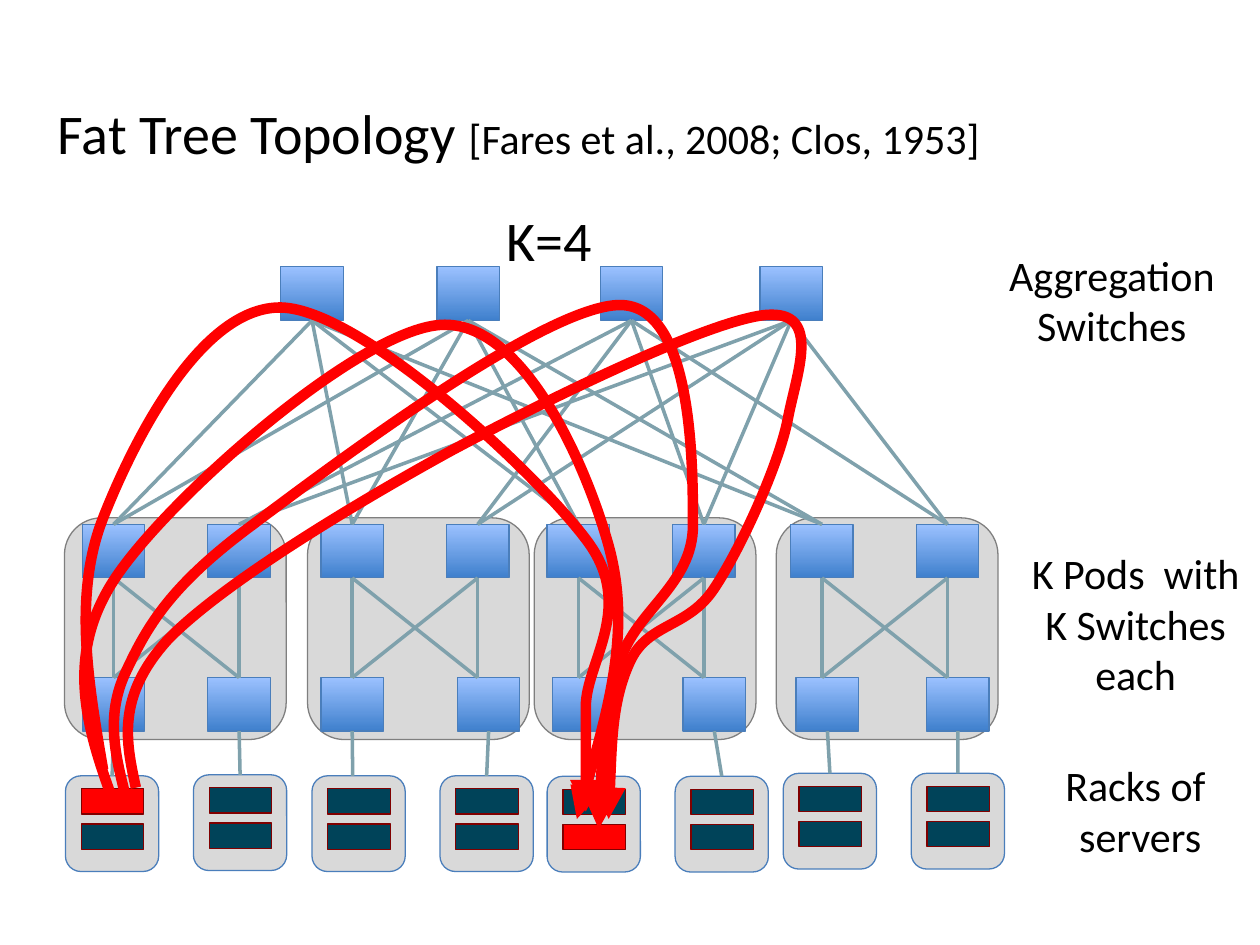
from lxml.etree import SubElement
from pptx import Presentation
from pptx.dml.color import RGBColor
from pptx.enum.shapes import MSO_CONNECTOR, MSO_SHAPE
from pptx.enum.text import MSO_ANCHOR, PP_ALIGN
from pptx.oxml.ns import qn
from pptx.util import Cm, Pt

BLACK = RGBColor(0x00, 0x00, 0x00)
RED = RGBColor(0xFF, 0x00, 0x00)
GREY = RGBColor(0xD9, 0xD9, 0xD9)
POD_LINE = RGBColor(0x7F, 0x7F, 0x7F)
BLUE = RGBColor(0x4A, 0x7E, 0xBB)
SWITCH_TOP = RGBColor(0x9B, 0xC1, 0xFF)
SWITCH_BOTTOM = RGBColor(0x3F, 0x80, 0xCD)
LINK = RGBColor(0x7F, 0xA1, 0xAC)
SERVER = RGBColor(0x00, 0x43, 0x59)
SERVER_LINE = RGBColor(0x80, 0x00, 0x00)
FONT = "Calibri"
TOP, BOTTOM = 0, 2  # connection sites

TITLE = [("Fat Tree Topology ", 32), ("[Fares et al., 2008; Clos, 1953]", 24)]
# box in cm, size, alignment, wrap, paragraphs
LABELS = [
    ((9.96, 4.01, 2.24, 1.6), 32, PP_ALIGN.LEFT, False, ["K=4"]),
    ((19.33, 4.9, 6.17, 2.29), 24, PP_ALIGN.CENTER, True, ["Aggregation Switches"]),
    ((19.81, 10.92, 6.17, 3.3), 24, PP_ALIGN.CENTER, True,
     ["K Pods  with", " K Switches ", "each"]),
    ((19.96, 15.19, 6.05, 2.29), 24, PP_ALIGN.CENTER, True, ["Racks of ", "servers"]),
]

# All positions in cm
POD_TOP, POD_SIZE = 10.44, 4.47
POD_LEFTS = [1.3, 6.2, 10.77, 15.65]
SWITCH_WIDTH, SWITCH_HEIGHT = 1.26, 1.08
CORE_TOP, UPPER_TOP, LOWER_TOP = 5.38, 10.57, 13.66
CORE_LEFTS = [5.66, 8.81, 12.1, 15.32]
UPPER_LEFTS = [left + step for left in (1.66, 6.47, 11.03, 15.94) for step in (0, 2.53)]
LOWER_LEFTS = [1.66, 4.19, 6.47, 9.22, 11.14, 13.77, 16.05, 18.68]
RACK_WIDTH, RACK_HEIGHT = 1.88, 1.93
RACK_LEFTS = [left + step for left in (1.32, 6.29, 11.03, 15.79) for step in (0, 2.58)]
RACK_TOPS = [15.64, 15.62, 15.64, 15.64, 15.65, 15.65, 15.59, 15.59]
SERVER_INSET, SERVER_DROPS, SERVER_HEIGHT = 0.32, (0.26, 0.97), 0.51
BUSY_SERVERS = {(0, 0), (4, 1)}  # rack, row
OFFSET_RACK, OFFSET_RACK_X = 2, 7.11  # this link meets its rack off centre

# Each flow: a start, then three Bezier points per curve
FLOWS = [
    [(2.08, 15.52), (1.78, 13.77), (1.47, 11.99), (2.08, 10.44),
     (2.69, 8.89), (4.06, 6.15), (5.69, 6.2), (7.32, 6.27), (10.8, 9.53), (11.81, 10.87),
     (12.85, 12.22), (11.81, 13.34), (11.81, 14.25),
     (11.81, 15.16), (11.81, 15.77), (11.81, 16.36)],
    [(2.54, 16.08), (2.34, 15.27), (2.11, 14.45), (2.54, 13.54),
     (2.97, 12.62), (3.43, 11.81), (5.08, 10.59), (6.73, 9.35), (11, 6.15), (12.5, 6.15),
     (13.97, 6.15), (13.97, 9.37), (13.97, 10.59),
     (13.97, 11.79), (12.8, 12.32), (12.5, 13.34),
     (12.17, 14.35), (12.12, 15.54), (12.07, 16.71)],
    [(2.34, 16.31), (1.78, 14.78), (1.24, 13.26), (2.34, 11.63),
     (3.43, 10.01), (7.24, 6.65), (8.89, 6.55), (10.54, 6.45), (11.81, 9.35), (12.27, 11),
     (12.73, 12.67), (12.19, 14.58), (11.63, 16.51)],
    [(2.74, 15.88), (2.54, 14.96), (2.34, 14.05), (3.38, 12.9),
     (4.45, 11.79), (7.09, 10.19), (9.09, 9.09), (11.13, 8), (14.33, 6.45), (15.44, 6.35),
     (16.59, 6.25), (16.05, 7.54), (15.88, 8.46),
     (15.7, 9.37), (14.94, 11.05), (14.4, 11.86),
     (13.87, 12.67), (13.06, 12.55), (12.7, 13.34),
     (12.34, 14.12), (12.32, 15.32), (12.27, 16.51)],
]


def add_run(paragraph, text, size):
    run = paragraph.add_run()
    run.text = text
    run.font.name, run.font.size = FONT, Pt(size)
    run.font.color.rgb = BLACK


def add_box(slide, kind, box, fill, line):
    shape = slide.shapes.add_shape(kind, *map(Cm, box))
    shape.shadow.inherit = False
    if fill is None:
        shape.fill.gradient()
        shape.fill.gradient_angle = 270
        for stop, color in zip(shape.fill.gradient_stops, (SWITCH_TOP, SWITCH_BOTTOM)):
            stop.color.rgb = color
    else:
        shape.fill.solid()
        shape.fill.fore_color.rgb = fill
    shape.line.color.rgb = line
    shape.line.width = Pt(0.75)
    return shape


def add_switches(slide, lefts, top):
    return [add_box(slide, MSO_SHAPE.RECTANGLE,
                    (left, top, SWITCH_WIDTH, SWITCH_HEIGHT), None, BLUE)
            for left in lefts]


def add_link(slide, upper, lower, end_x=None):
    """Link the bottom of upper to the top of lower, off centre if end_x is given."""
    link = slide.shapes.add_connector(
        MSO_CONNECTOR.STRAIGHT, upper.left + upper.width // 2, upper.top + upper.height,
        lower.left + lower.width // 2 if end_x is None else end_x, lower.top)
    link.begin_connect(upper, BOTTOM)
    if end_x is None:
        link.end_connect(lower, TOP)
    link.line.color.rgb = LINK
    link.line.width = Pt(2)
    SubElement(link.element.spPr, qn("a:effectLst"))


def add_flow(slide, points):
    """Draw a red curved arrow, turning each three segments into one Bezier curve."""
    start, *rest = [(Cm(x), Cm(y)) for x, y in points]
    builder = slide.shapes.build_freeform(*start)
    builder.add_line_segments(rest, close=False)
    flow = builder.convert_to_shape()
    flow.shadow.inherit = False
    flow.fill.background()
    flow.line.color.rgb = RED
    flow.line.width = Pt(6)
    SubElement(flow.element.spPr.find(qn("a:ln")), qn("a:tailEnd"), type="triangle")
    outline = flow.element.xpath(".//a:path")[0]
    segments = outline.findall(qn("a:lnTo"))
    for first in range(0, len(segments), 3):
        curve = SubElement(outline, qn("a:cubicBezTo"))
        for segment in segments[first:first + 3]:
            curve.append(segment[0])
            outline.remove(segment)


def add_label(slide, box, size, alignment, wrap, lines):
    frame = slide.shapes.add_textbox(*map(Cm, box)).text_frame
    frame.word_wrap = wrap
    for index, line in enumerate(lines):
        paragraph = frame.add_paragraph() if index else frame.paragraphs[0]
        paragraph.alignment = alignment
        add_run(paragraph, line, size)


def add_title(slide):
    title = slide.shapes.title
    title.left, title.top, title.width, title.height = map(Cm, (0.91, 1.27, 23.57, 2.77))
    title.text_frame.vertical_anchor = MSO_ANCHOR.MIDDLE
    paragraph = title.text_frame.paragraphs[0]
    paragraph.alignment = PP_ALIGN.LEFT
    for text, size in TITLE:
        add_run(paragraph, text, size)


def main():
    presentation = Presentation()
    presentation.slide_width, presentation.slide_height = Cm(25.4), Cm(19.05)
    slide = presentation.slides.add_slide(presentation.slide_layouts[5])
    add_title(slide)

    for left in POD_LEFTS:
        add_box(slide, MSO_SHAPE.ROUNDED_RECTANGLE,
                (left, POD_TOP, POD_SIZE, POD_SIZE), GREY, POD_LINE)
    cores = add_switches(slide, CORE_LEFTS, CORE_TOP)
    uppers = add_switches(slide, UPPER_LEFTS, UPPER_TOP)
    lowers = add_switches(slide, LOWER_LEFTS, LOWER_TOP)

    for index, core in enumerate(cores):
        for upper in uppers[index // 2::2]:
            add_link(slide, core, upper)
    for pod in range(0, len(uppers), 2):
        pair = uppers[pod:pod + 2]
        for upper in pair:
            for above, lower in zip(pair, lowers[pod:pod + 2]):
                # the links run straight down even where the lower switch is shifted
                aligned = above.left == lower.left
                add_link(slide, upper, lower,
                         None if aligned else above.left + above.width // 2)

    for index, (left, top) in enumerate(zip(RACK_LEFTS, RACK_TOPS)):
        rack = add_box(slide, MSO_SHAPE.ROUNDED_RECTANGLE,
                       (left, top, RACK_WIDTH, RACK_HEIGHT), GREY, BLUE)
        for row, drop in enumerate(SERVER_DROPS):
            add_box(slide, MSO_SHAPE.RECTANGLE,
                    (left + SERVER_INSET, top + drop, SWITCH_WIDTH, SERVER_HEIGHT),
                    RED if (index, row) in BUSY_SERVERS else SERVER, SERVER_LINE)
        add_link(slide, lowers[index], rack,
                 Cm(OFFSET_RACK_X) if index == OFFSET_RACK else None)

    for points in FLOWS:
        add_flow(slide, points)
    for label in LABELS:
        add_label(slide, *label)
    presentation.save("out.pptx")


if __name__ == "__main__":
    main()
